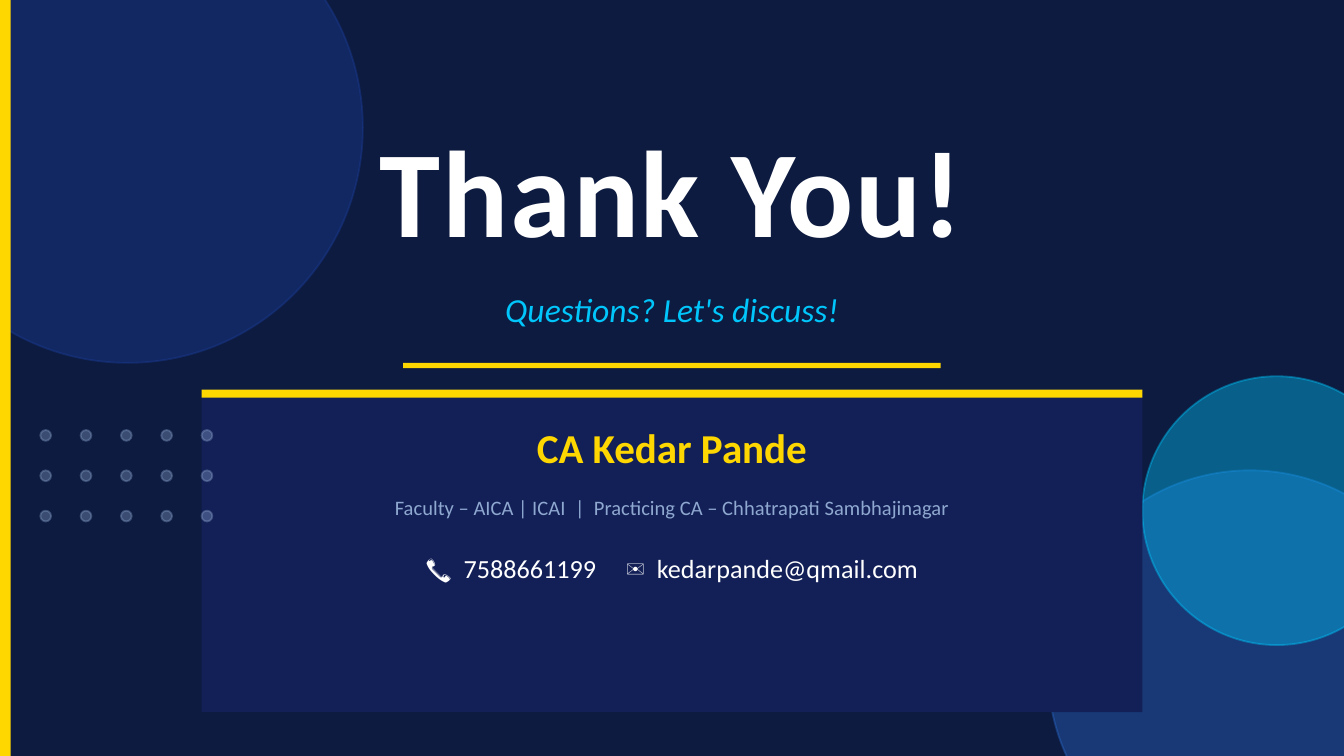
from itertools import product

from lxml.etree import SubElement
from pptx import Presentation
from pptx.dml.color import RGBColor
from pptx.enum.shapes import MSO_SHAPE
from pptx.enum.text import MSO_ANCHOR, MSO_AUTO_SIZE, PP_ALIGN
from pptx.oxml.ns import qn
from pptx.util import Inches, Pt

WIDTH = 10
HEIGHT = WIDTH * 9 / 16
COLORS = {
    "night": "0D1B40",
    "royal": "1A3A8F",
    "blue": "2D72D9",
    "cyan": "00C6FB",
    "gold": "FFD700",
    "card": "132057",
    "mist": "8FA8D0",
    "white": "FFFFFF",
}


def rgb(color):
    return RGBColor.from_string(COLORS[color])


def add_bar(slide, left, top, width, height, color):
    bar = slide.shapes.add_shape(
        MSO_SHAPE.RECTANGLE, Inches(left), Inches(top), Inches(width), Inches(height))
    bar.shadow.inherit = False
    bar.fill.solid()
    bar.fill.fore_color.rgb = rgb(color)
    bar.line.fill.background()


def add_circle(slide, left, top, diameter, color, opacity):
    """Add a circle whose fill and outline share one opacity in percent."""
    circle = slide.shapes.add_shape(
        MSO_SHAPE.OVAL, Inches(left), Inches(top), Inches(diameter), Inches(diameter))
    circle.shadow.inherit = False
    circle.line.width = Pt(1)
    for paint in (circle.fill, circle.line.fill):
        paint.solid()
        paint.fore_color.rgb = rgb(color)
    for tint in circle.element.spPr.iter(qn("a:srgbClr")):
        SubElement(tint, qn("a:alpha"), val=str(opacity * 1000))


def write_line(box, left, top, width, height, pieces, size, color,
               bold=False, italic=False, tracking=None):
    """Place a box and centre one line in it.

    Pieces are (text, gap) pairs; gap is the extra width in points of the
    space that follows the text, or None where no space follows.
    """
    box.left, box.top = Inches(left), Inches(top)
    box.width, box.height = Inches(width), Inches(height)
    frame = box.text_frame
    frame.word_wrap = True
    frame.auto_size = MSO_AUTO_SIZE.NONE
    frame.vertical_anchor = MSO_ANCHOR.MIDDLE
    line = frame.paragraphs[0]
    line.alignment = PP_ALIGN.CENTER
    line.space_before = Pt(0)
    font = line.font
    font.name, font.size = "Calibri", Pt(size)
    font.bold, font.italic = bold, italic
    font.color.rgb = rgb(color)
    for text, gap in pieces:
        run = line.add_run()
        run.text = text
        if tracking:
            run.font._element.set("spc", str(tracking * 100))
        if gap is not None:
            space = line.add_run()
            space.text = " "
            space.font._element.set("spc", str(round(gap * 100)))


def add_backdrop(slide):
    slide.background.fill.solid()
    slide.background.fill.fore_color.rgb = rgb("night")
    add_circle(slide, -0.8, -0.8, 3.5, "royal", 45)
    add_circle(slide, 7.8, 3.5, 3, "blue", 35)
    add_circle(slide, 8.5, 2.8, 2, "cyan", 40)
    add_bar(slide, 0, 0, 0.08, HEIGHT, "gold")


def add_closing(slide, left, top, width):
    title, subtitle = slide.placeholders
    write_line(title, left, top, width, 1.4, [("Thank You!", None)], 66, "white",
               bold=True, tracking=1)
    write_line(subtitle, left, top + 1.35, width, 0.5,
               [("Questions? Let's discuss!", None)], 18, "cyan", italic=True)
    rule_width = 4
    add_bar(slide, left + (width - rule_width) / 2, top + 2, rule_width, 0.04, "gold")


def add_contact_card(slide, left, top, width, height):
    add_bar(slide, left, top, width, height, "card")
    add_bar(slide, left, top, width, 0.06, "gold")
    name = [("CA Kedar Pande", None)]
    role = [("Faculty – AICA | ICAI", 2.5), ("|", 2.5),
            ("Practicing CA – Chhatrapati Sambhajinagar", None)]
    contact = [("📞", 3.2), ("7588661199", 12.7), ("✉️", 3.2),
               ("kedarpande@qmail.com", None)]
    for offset, line_height, pieces, size, color, bold in (
        (0.15, 0.55, name, 22, "gold", True),
        (0.7, 0.35, role, 11, "mist", False),
        (1.1, 0.45, contact, 14, "white", False),
    ):
        box = slide.shapes.add_textbox(0, 0, 0, 0)
        write_line(box, left, top + offset, width, line_height, pieces, size, color, bold)


def add_dot_grid(slide, left, top, rows, columns, pitch):
    for row, column in product(range(rows), range(columns)):
        add_circle(slide, left + column * pitch, top + row * pitch, 0.08, "mist", 35)


def main():
    deck = Presentation()
    deck.slide_width, deck.slide_height = Inches(WIDTH), Inches(HEIGHT)
    slide = deck.slides.add_slide(deck.slide_layouts[0])
    add_backdrop(slide)
    add_closing(slide, 0.3, 0.7, 9.4)
    add_contact_card(slide, 1.5, 2.9, 7, 2.4)
    add_dot_grid(slide, 0.3, 3.2, rows=3, columns=5, pitch=0.3)
    deck.save("out.pptx")


if __name__ == "__main__":
    main()
